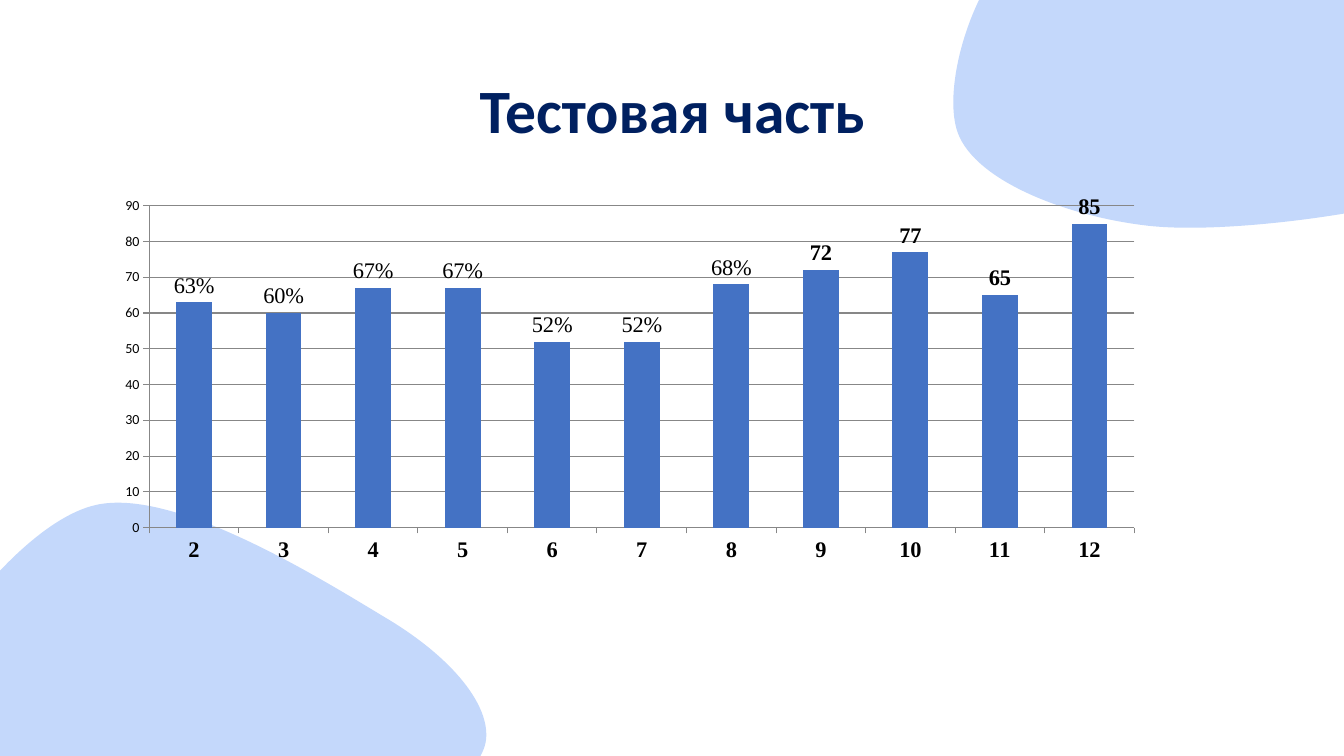
import lxml.etree
import pptx
import pptx.chart.data
import pptx.dml.color
import pptx.enum.chart
import pptx.enum.text
import pptx.oxml
import pptx.oxml.ns
import pptx.util

RGBColor = pptx.dml.color.RGBColor
qn = pptx.oxml.ns.qn
PALE_BLUE = RGBColor(0xC4, 0xD8, 0xFB)
NAVY = RGBColor(0x00, 0x20, 0x60)
BAR_BLUE = RGBColor(0x44, 0x72, 0xC4)
GREY = RGBColor(0x87, 0x87, 0x87)
BLACK = RGBColor(0x00, 0x00, 0x00)
PX = 9144  # 100 px to the inch


def px(*lengths):
    return [pptx.util.Emu(length * PX) for length in lengths]


def style_font(font, **values):
    for name, value in values.items():
        if name == "color":
            font.color.rgb = value
        else:
            setattr(font, name, value)


deck = pptx.Presentation()
deck.slide_width, deck.slide_height = px(1333, 750)
page = deck.slides.add_slide(deck.slide_layouts[6])

# Each blob: a start point, then cubic curves (two handles and an end point)
top_right_blob = [
    (1029, -69),
    (1088, -101), (1238, -84), (1305, -56),
    (1373, -28), (1412, 58), (1433, 98),
    (1454, 139), (1480, 167), (1431, 188),
    (1382, 209), (1220, 233), (1139, 224),
    (1059, 215), (968, 180), (950, 132),
    (932, 83), (970, -38), (1029, -69),
]
bottom_left_blob = [
    (95, 501),
    (174, 483), (321, 576), (386, 615),
    (450, 654), (486, 700), (482, 734),
    (478, 767), (425, 803), (361, 817),
    (297, 831), (173, 832), (97, 817),
    (22, 801), (-92, 777), (-92, 724),
    (-93, 672), (15, 519), (95, 501),
]
for points in (top_right_blob, bottom_left_blob):
    builder = page.shapes.build_freeform(*points[0], scale=PX)
    builder.add_line_segments(points[1:], close=True)
    blob = builder.convert_to_shape()
    blob.shadow.inherit = False
    blob.fill.solid()
    blob.fill.fore_color.rgb = PALE_BLUE
    blob.line.fill.background()
    # Every three straight segments become one cubic curve
    segments = list(blob.element.iter(qn("a:lnTo")))
    for first in range(0, len(segments), 3):
        curve = lxml.etree.Element(qn("a:cubicBezTo"))
        segments[first].addprevious(curve)
        for segment in segments[first:first + 3]:
            curve.append(segment[0])
            segment.getparent().remove(segment)

title = page.shapes.add_textbox(*px(92, 40, 1150, 145))
title.text_frame.word_wrap = True
title.text_frame.vertical_anchor = pptx.enum.text.MSO_ANCHOR.MIDDLE
para = title.text_frame.paragraphs[0]
para.alignment = pptx.enum.text.PP_ALIGN.CENTER
para.line_spacing = 0.9
span = para.add_run()
span.text = "Тестовая часть"
style_font(span.font, name="Calibri", size=pptx.util.Pt(44), bold=True, color=NAVY)

scores = {2: 63, 3: 60, 4: 67, 5: 67, 6: 52, 7: 52, 8: 68, 9: 72, 10: 77, 11: 65, 12: 85}
PERCENT_LABELS = 7  # the first bars carry a percent sign
CHART_WIDTH, CHART_HEIGHT = 1028, 426
data = pptx.chart.data.CategoryChartData()
data.categories = [str(task) for task in scores]
data.add_series("Series 1", scores.values())
chart = page.shapes.add_chart(
    pptx.enum.chart.XL_CHART_TYPE.COLUMN_CLUSTERED,
    *px(119, 193, CHART_WIDTH, CHART_HEIGHT), data).chart
chart.has_title = False
chart.has_legend = False
style_font(chart.font, name="Calibri", size=pptx.util.Pt(10), color=BLACK)

plot = chart.plots[0]
plot.gap_width = 150
plot.vary_by_categories = False
series = plot.series[0]
series.format.fill.solid()
series.format.fill.fore_color.rgb = BAR_BLUE

label_font = dict(name="Times New Roman", size=pptx.util.Pt(16), color=BLACK)
above_bar = pptx.enum.chart.XL_LABEL_POSITION.OUTSIDE_END
labels = series.data_labels
labels.show_value = True
labels.position = above_bar
style_font(labels.font, bold=True, **label_font)
for index, score in enumerate(list(scores.values())[:PERCENT_LABELS]):
    label = series.points[index].data_label
    span = label.text_frame.paragraphs[0].add_run()
    span.text = f"{score}%"
    style_font(span.font, bold=False, **label_font)
    label.position = above_bar

value_axis, category_axis = chart.value_axis, chart.category_axis
value_axis.minimum_scale, value_axis.maximum_scale, value_axis.major_unit = 0, 90, 10
value_axis.has_major_gridlines = True
style_font(category_axis.tick_labels.font, bold=True, **label_font)
for axis in (value_axis, category_axis):
    axis.major_tick_mark = pptx.enum.chart.XL_TICK_MARK.OUTSIDE
    axis.minor_tick_mark = pptx.enum.chart.XL_TICK_MARK.NONE
for line in (value_axis.format.line, category_axis.format.line,
             value_axis.major_gridlines.format.line):
    line.color.rgb = GREY
    line.width = pptx.util.Pt(0.75)

# Fixed inner plot area, as fractions of the chart
plot_area = chart.element.find(".//" + qn("c:plotArea"))
for old_layout in plot_area.findall(qn("c:layout")):
    plot_area.remove(old_layout)
settings = {"layoutTarget": "inner", "xMode": "edge", "yMode": "edge",
            "x": 29 / CHART_WIDTH, "y": 9 / CHART_HEIGHT,
            "w": 977 / CHART_WIDTH, "h": 321 / CHART_HEIGHT}
settings_xml = "".join(f'<c:{tag} val="{value}"/>' for tag, value in settings.items())
plot_area.insert(0, pptx.oxml.parse_xml(
    f'<c:layout {pptx.oxml.ns.nsdecls("c")}><c:manualLayout>{settings_xml}'
    "</c:manualLayout></c:layout>"))

deck.save("out.pptx")
